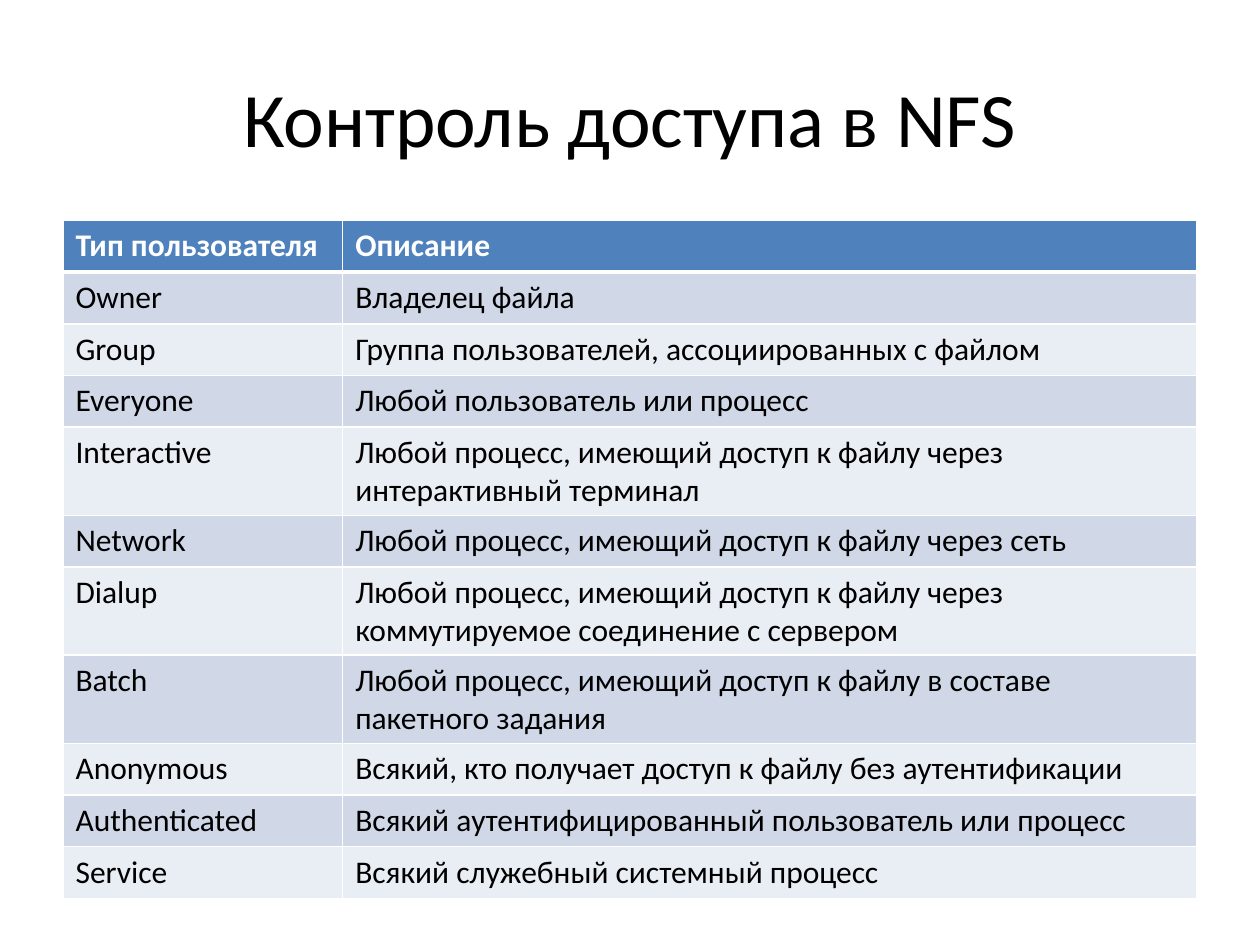
from lxml import etree
from pptx import Presentation
from pptx import util as u
from pptx.dml.color import RGBColor
from pptx.enum import text
from pptx.oxml import ns

BLACK = RGBColor(0x00, 0x00, 0x00)
WHITE = RGBColor(0xFF, 0xFF, 0xFF)
HEADER_BLUE = RGBColor(0x4F, 0x81, 0xBD)
BANDS = (RGBColor(0xE9, 0xED, 0xF4), RGBColor(0xD0, 0xD8, 0xE8))

HEADERS = ("Тип пользователя", "Описание")
USER_TYPES = [
    ("Owner", "Владелец файла"),
    ("Group", "Группа пользователей, ассоциированных с файлом"),
    ("Everyone", "Любой пользователь или процесс"),
    ("Interactive", "Любой процесс, имеющий доступ к файлу через\nинтерактивный терминал"),
    ("Network", "Любой процесс, имеющий доступ к файлу через сеть"),
    ("Dialup", "Любой процесс, имеющий доступ к файлу через\n"
               "коммутируемое соединение с сервером"),
    ("Batch", "Любой процесс, имеющий доступ к файлу в составе пакетного задания"),
    ("Anonymous", "Всякий, кто получает доступ к файлу без аутентификации"),
    ("Authenticated", "Всякий аутентифицированный пользователь или процесс"),
    ("Serviсе", "Всякий служебный системный процесс"),
]


class SlideBuilder:
    font = "Calibri"
    title_size = 44
    table_size = 18

    def __init__(self, s):
        self.s = s

    def format_text(self, tf, size, color, bold=False):
        for p in tf.paragraphs:
            for r in p.runs:
                r.font.name = self.font
                r.font.size = u.Pt(size)
                r.font.bold = bold
                r.font.color.rgb = color

    def title(self, wording, left, top, width, height):
        sp = self.s.shapes.add_textbox(*map(u.Inches, (left, top, width, height)))
        tf = sp.text_frame
        tf.word_wrap = True
        tf.vertical_anchor = text.MSO_ANCHOR.MIDDLE
        tf.text = wording
        tf.paragraphs[0].alignment = text.PP_ALIGN.CENTER
        self.format_text(tf, self.title_size, BLACK)

    def borders(self, cell, widths):
        """Draw white left, right, top and bottom borders, widths in points."""
        tc_pr = cell._tc.get_or_add_tcPr()
        for i, (side, width) in enumerate(zip("LRTB", widths)):
            ln = etree.Element(ns.qn(f"a:ln{side}"), w=str(u.Pt(width)))
            fill = etree.SubElement(ln, ns.qn("a:solidFill"))
            etree.SubElement(fill, ns.qn("a:srgbClr"), val=str(WHITE))
            tc_pr.insert(i, ln)

    def table(self, rows, left, top, col_widths, row_height):
        frame = self.s.shapes.add_table(
            len(rows), len(col_widths), u.Inches(left), u.Inches(top),
            u.Inches(sum(col_widths)), u.Inches(row_height * len(rows)))
        table = frame.table
        for column, width in zip(table.columns, col_widths):
            column.width = u.Inches(width)
        for i, row in enumerate(rows):
            header = i == 0
            table.rows[i].height = u.Inches(row_height)
            for j, wording in enumerate(row):
                cell = table.cell(i, j)
                cell.text_frame.text = wording
                self.format_text(cell.text_frame, self.table_size,
                                 WHITE if header else BLACK, header)
                cell.fill.solid()
                cell.fill.fore_color.rgb = HEADER_BLUE if header else BANDS[i % 2]
                self.borders(cell, (1, 1, 3 if i == 1 else 1, 3 if header else 1))


def main():
    prs = Presentation()
    prs.slide_width, prs.slide_height = u.Inches(10), u.Inches(7.5)
    builder = SlideBuilder(prs.slides.add_slide(prs.slide_layouts[6]))
    builder.title("Контроль доступа в NFS", 0.5, 0.3, 9, 1.25)
    builder.table([HEADERS] + USER_TYPES, 0.5, 1.75, (2.22, 6.78), 0.41)
    prs.save("out.pptx")


if __name__ == "__main__":
    main()
